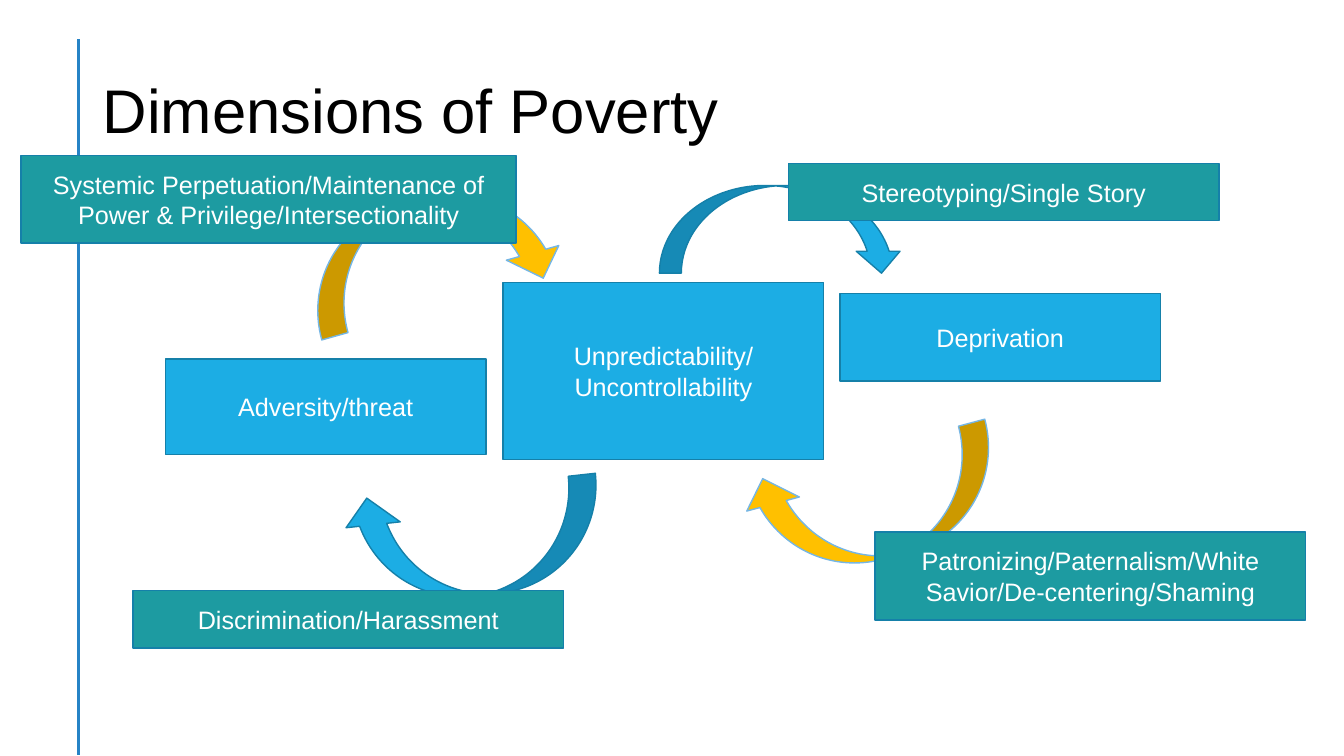
from lxml import etree
from pptx import Presentation
from pptx.dml.color import RGBColor as RGB
from pptx.enum.shapes import MSO_CONNECTOR as LINE, MSO_SHAPE as SHAPE
from pptx.enum.text import MSO_ANCHOR as ANCHOR, PP_ALIGN as ALIGN
from pptx.oxml.ns import qn
from pptx.util import Inches, Pt

COLORS = {
    "rule": "2683C6", "title": "000000", "text": "FFFFFF",
    "blue": "1CADE4", "teal": "1D9BA1", "edge": "1580A9",
    "gold": "FFC000", "rim": "75B6E5",
}

THEMES = [
    ((1.64, 3.56, 3.18, 0.95), "Adversity/threat"),
    ((4.99, 2.8, 3.18, 1.76), "Unpredictability/\nUncontrollability"),
    ((8.33, 2.91, 3.18, 0.87), "Deprivation"),
]
ARROWS = [
    ((6.54, 1.84, 2.42, 0.87), 0, "blue", "edge"),
    ((3.42, 4.83, 2.55, 1.08), 173.8, "blue", "edge"),
    ((3, 1.97, 2.55, 1.08), 344.4, "gold", "rim"),
    ((7.4, 4.47, 2.55, 1.08), 165, "gold", "rim"),
]
FORCES = [
    ((1.32, 5.86, 4.27, 0.57), "Discrimination/Harassment"),
    ((7.82, 1.62, 4.27, 0.57), "Stereotyping/Single Story"),
    ((8.68, 5.28, 4.27, 0.87),
     "Patronizing/Paternalism/White Savior/De-centering/Shaming"),
    ((0.21, 1.54, 4.91, 0.87),
     "Systemic Perpetuation/Maintenance of Power & Privilege/Intersectionality"),
]


def color(name):
    return RGB.from_string(COLORS[name])


def write(frame, text, size, tint, align):
    frame.word_wrap = True
    frame.vertical_anchor = ANCHOR.MIDDLE
    frame.text = text
    for para in frame.paragraphs:
        para.alignment = align
        para.font.name = "Arial"
        para.font.size = Pt(size)
        para.font.color.rgb = color(tint)


def add_form(slide, kind, box, fill, edge):
    form = slide.shapes.add_shape(kind, *map(Inches, box))
    form.shadow.inherit = False
    form.fill.solid()
    form.fill.fore_color.rgb = color(fill)
    form.line.color.rgb = color(edge)
    form.line.width = Pt(1)
    return form


def add_rule(slide, left, top, end):
    rule = slide.shapes.add_connector(
        LINE.STRAIGHT, Inches(left), Inches(top), Inches(left), Inches(end))
    rule.line.color.rgb = color("rule")
    rule.line.width = Pt(2)
    etree.SubElement(rule._element.spPr, qn("a:effectLst"))


def add_title(slide, box, text):
    frame = slide.shapes.add_textbox(*map(Inches, box)).text_frame
    write(frame, text, 44, "title", ALIGN.LEFT)
    frame.paragraphs[0].line_spacing = 0.9


def add_label(slide, box, text, fill):
    label = add_form(slide, SHAPE.RECTANGLE, box, fill, "edge")
    write(label.text_frame, text, 18, "text", ALIGN.CENTER)


def add_arrow(slide, box, turn, fill, edge):
    arrow = add_form(slide, SHAPE.CURVED_DOWN_ARROW, box, fill, edge)
    arrow.rotation = turn


def main():
    deck = Presentation()
    deck.slide_width, deck.slide_height = Inches(13.33), Inches(7.5)
    slide = deck.slides.add_slide(deck.slide_layouts[6])
    add_rule(slide, 0.78, 0.39, 7.49)
    add_title(slide, (0.92, 0.4, 11.5, 1.45), "Dimensions of Poverty")
    for box, text in THEMES:
        add_label(slide, box, text, "blue")
    for arrow in ARROWS:
        add_arrow(slide, *arrow)
    for box, text in FORCES:
        add_label(slide, box, text, "teal")
    deck.save("out.pptx")


if __name__ == "__main__":
    main()
